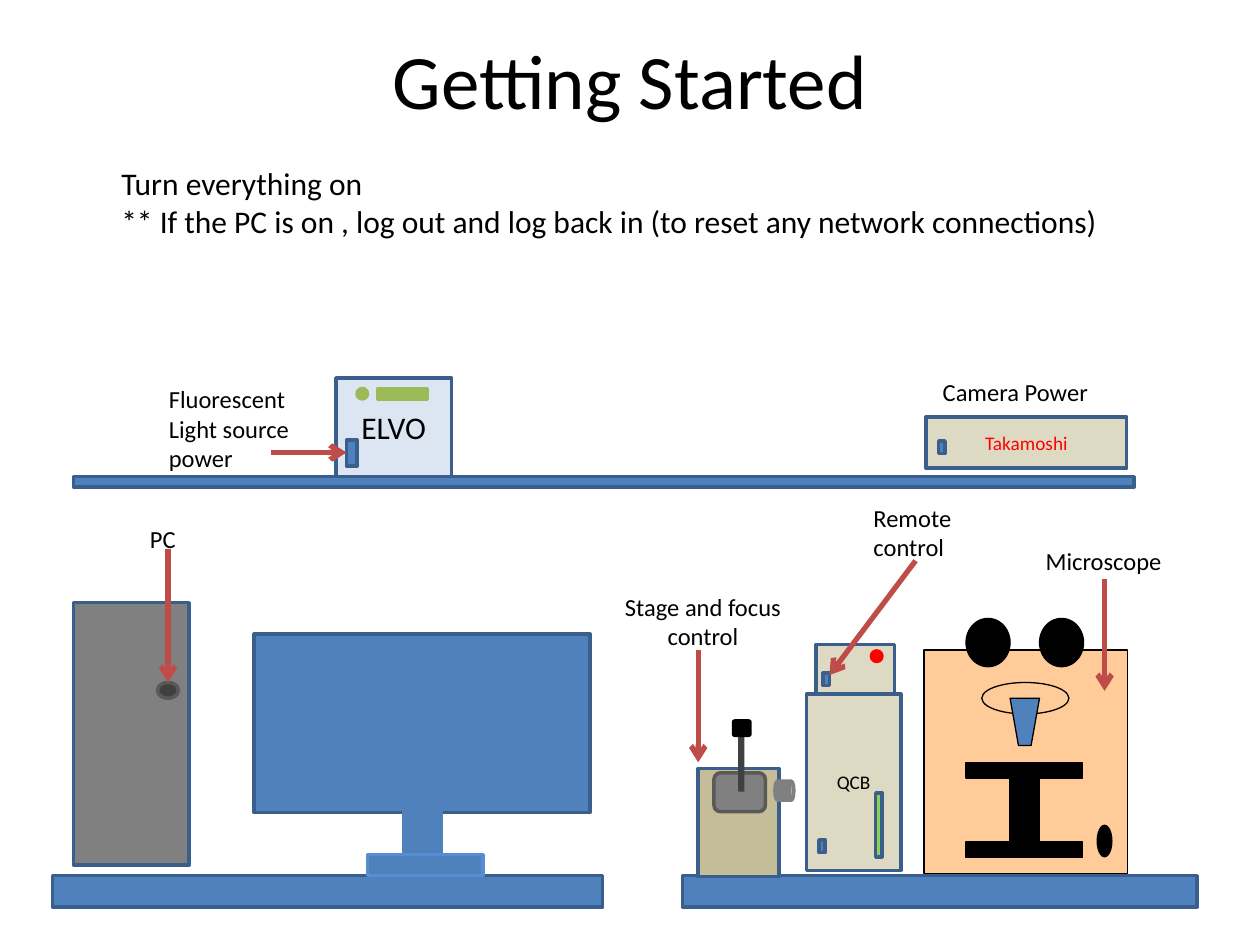
"""Build the slide that shows how to switch on a microscope workstation."""
import pptx
import pptx.dml.color
import pptx.enum.shapes
import pptx.enum.text
import pptx.oxml
import pptx.oxml.ns
import pptx.util

COLUMNS, ROWS = 120, 90
WIDTH, HEIGHT = pptx.util.Inches(10), pptx.util.Inches(7.5)
FONT = "Calibri"
COLORS = {
    "black": "000000", "red": "FF0000", "blue": "4F81BD", "edge": "3A5F8C",
    "sky": "558ED5", "ice": "DCE6F2", "sand": "DDD9C3", "khaki": "C4BD97",
    "grey": "808080", "slate": "595959", "coal": "404040", "peach": "FFCC99",
    "green": "9BBB59", "lime": "92D050", "arrow": "BF4C48",
}
KINDS = pptx.enum.shapes.MSO_SHAPE
ALIGN = pptx.enum.text.PP_ALIGN
ANCHOR = pptx.enum.text.MSO_ANCHOR


def x(columns):
    """Turn grid columns into a slide length."""
    return round(columns * WIDTH / COLUMNS)


def y(rows):
    """Turn grid rows into a slide length."""
    return round(rows * HEIGHT / ROWS)


def place(area):
    """Turn left, top, width and height on the grid into slide lengths."""
    left, top, width, height = area
    return x(left), y(top), x(width), y(height)


def rgb(color):
    """Look up a named color."""
    return pptx.dml.color.RGBColor.from_string(COLORS[color])


def write(frame, lines, size, color="black", align=ALIGN.LEFT):
    """Write each line as a paragraph with one run."""
    for number, line in enumerate(lines):
        paragraph = frame.add_paragraph() if number else frame.paragraphs[0]
        paragraph.alignment = align
        run = paragraph.add_run()
        run.text = line
        run.font.name = FONT
        run.font.size = pptx.util.Pt(size)
        run.font.color.rgb = rgb(color)


def paint(part, fill, edge, weight):
    """Give a part its fill and outline without a shadow."""
    part.shadow.inherit = False
    part.fill.solid()
    part.fill.fore_color.rgb = rgb(fill)
    if edge:
        part.line.color.rgb = rgb(edge)
        part.line.width = pptx.util.Pt(weight)
    else:
        part.line.fill.background()


def add_part(slide, area, fill="blue", edge="edge", weight=2, kind=KINDS.RECTANGLE):
    """Add a preset shape on the grid."""
    part = slide.shapes.add_shape(kind, *place(area))
    paint(part, fill, edge, weight)
    return part


def add_device(slide, area, fill, name, size, color="black"):
    """Add a box with its name in the middle."""
    device = add_part(slide, area, fill)
    device.text_frame.vertical_anchor = ANCHOR.MIDDLE
    write(device.text_frame, [name], size, color, ALIGN.CENTER)


def add_label(slide, area, lines, size=14, align=ALIGN.LEFT):
    """Add unwrapped text that sizes its own box."""
    frame = slide.shapes.add_textbox(*place(area)).text_frame
    frame.word_wrap = False
    frame.auto_size = pptx.enum.text.MSO_AUTO_SIZE.SHAPE_TO_FIT_TEXT
    write(frame, lines, size, align=align)


def add_arrow(slide, start, end):
    """Add a straight arrow between two grid points."""
    arrow = slide.shapes.add_connector(
        pptx.enum.shapes.MSO_CONNECTOR.STRAIGHT,
        x(start[0]), y(start[1]), x(end[0]), y(end[1]))
    arrow.line.color.rgb = rgb("arrow")
    arrow.line.width = pptx.util.Pt(3)
    properties = arrow.element.spPr
    tip = pptx.oxml.parse_xml(
        f'<a:tailEnd {pptx.oxml.ns.nsdecls("a")} type="arrow"/>')
    properties.find(pptx.oxml.ns.qn("a:ln")).append(tip)
    properties.append(pptx.oxml.parse_xml(
        f'<a:effectLst {pptx.oxml.ns.nsdecls("a")}/>'))


def add_heading(slide):
    """Add the title and the opening instruction."""
    title = slide.shapes.add_textbox(*place((6, 0, 108, 15))).text_frame
    title.word_wrap = True
    title.vertical_anchor = ANCHOR.MIDDLE
    write(title, ["Getting Started"], 44, align=ALIGN.CENTER)
    add_label(slide, (10.37, 15, 95.9, 8.5), [
        "Turn everything on",
        "** If the PC is on , log out and log back in (to reset any network connections)",
    ], 18)


def add_shelf(slide):
    """Add the shelf with the light source and the camera power supply."""
    add_part(slide, (7, 45.4, 101, 1))
    add_device(slide, (32, 36, 11, 9.4), "ice", "ELVO", 18)
    add_part(slide, (33, 41.9, 1, 2.5))
    add_part(slide, (34, 37, 1, 1), "green", "green", kind=KINDS.OVAL)
    add_part(slide, (36, 37, 4.7, 1), "green", "green")
    add_device(slide, (88.2, 39.7, 19.1, 4.9), "sand", "Takamoshi", 11, "red")
    add_part(slide, (89.4, 42, 0.6, 1.2))


def add_computer(slide):
    """Add the desk with the PC and its monitor."""
    add_part(slide, (5, 83.4, 52.4, 3))
    add_part(slide, (7, 57.4, 11, 25), "grey")
    add_part(slide, (15, 65, 2, 1.5), "coal", "slate", kind=KINDS.OVAL)
    add_part(slide, (24.2, 60.4, 32, 17))
    add_part(slide, (38.5, 75.4, 3.5, 7), edge="blue")
    add_part(slide, (35, 81.4, 11, 2), edge="sky")


def add_controls(slide):
    """Add the desk with the joystick and the control boxes."""
    add_part(slide, (65, 83.4, 49, 3))
    add_part(slide, (66.5, 73.2, 7.7, 10.3), "khaki")
    knob = add_part(slide, (73.8, 74.4, 1.8, 1.8), "grey", "grey", kind=KINDS.CAN)
    knob.rotation = 90
    rounded = KINDS.ROUNDED_RECTANGLE
    add_part(slide, (68, 73.6, 4.9, 3.7), "grey", "slate", kind=rounded)
    add_part(slide, (70.3, 69.4, 0.6, 6), "coal", None, kind=rounded)
    add_part(slide, (69.7, 68.5, 1.9, 1.7), "black", None, kind=rounded)
    add_part(slide, (77.7, 61.4, 7.5, 4.8), "sand")
    add_part(slide, (78.4, 64.1, 0.6, 1.2))
    add_part(slide, (83, 62, 1, 1), "red", "red", kind=KINDS.OVAL)
    add_device(slide, (76.8, 66.1, 9, 16.8), "sand", "QCB", 11)
    add_part(slide, (78, 80, 0.6, 1.2))
    add_part(slide, (83.4, 75.5, 0.6, 6.1), "lime")


def add_microscope(slide):
    """Add the microscope seen from the front."""
    thin = {"edge": "black", "weight": 0.75}
    add_part(slide, (88, 61.9, 19.4, 21.3), "peach", **thin)
    for eyepiece in (92, 99):
        add_part(slide, (eyepiece, 58.9, 4.2, 4.6), "black", kind=KINDS.OVAL, **thin)
    for stage in (72.6, 80.2):
        add_part(slide, (92, stage, 11.1, 1.5), "black", **thin)
    add_part(slide, (96.2, 74.1, 2.8, 6.1), "black", **thin)
    add_part(slide, (104.5, 78.6, 1.4, 3), "black", kind=KINDS.OVAL, **thin)
    add_part(slide, (93.5, 65, 8.3, 3), "peach", kind=KINDS.OVAL, **thin)
    builder = slide.shapes.build_freeform(x(96.2), y(66.5))
    builder.add_line_segments(
        [(x(97), y(71)), (x(98.2), y(71)), (x(99), y(66.5))], close=True)
    paint(builder.convert_to_shape(), "blue", "black", 0.75)


def add_pointers(slide):
    """Add the labels and the arrows to the switches."""
    add_label(slide, (14.9, 36, 13.9, 9.7), ["Fluorescent", "Light source", "power"])
    add_label(slide, (82, 47.3, 10.4, 6.8), ["Remote", "control"])
    add_label(slide, (13.1, 49.3, 4.9, 4.1), ["PC"])
    add_label(slide, (58, 55.8, 17.9, 6.2), ["Stage and focus", "control"],
              align=ALIGN.CENTER)
    add_label(slide, (98.4, 51.4, 13.6, 4.1), ["Microscope"])
    add_label(slide, (88.6, 35.3, 16.3, 4.1), ["Camera Power"])
    for start, end in (
        ((25.8, 43.1), (33, 43.1)),
        ((87.2, 53.4), (79, 64.3)),
        ((16, 52.3), (16, 65)),
        ((66.5, 61.9), (66.5, 72.6)),
        ((105.2, 55.1), (105.2, 65.8)),
    ):
        add_arrow(slide, start, end)


def main():
    """Build and save the presentation."""
    deck = pptx.Presentation()
    deck.slide_width, deck.slide_height = WIDTH, HEIGHT
    slide = deck.slides.add_slide(deck.slide_layouts[6])
    for add_section in (add_heading, add_shelf, add_computer, add_controls,
                        add_microscope, add_pointers):
        add_section(slide)
    deck.save("out.pptx")


if __name__ == "__main__":
    main()
